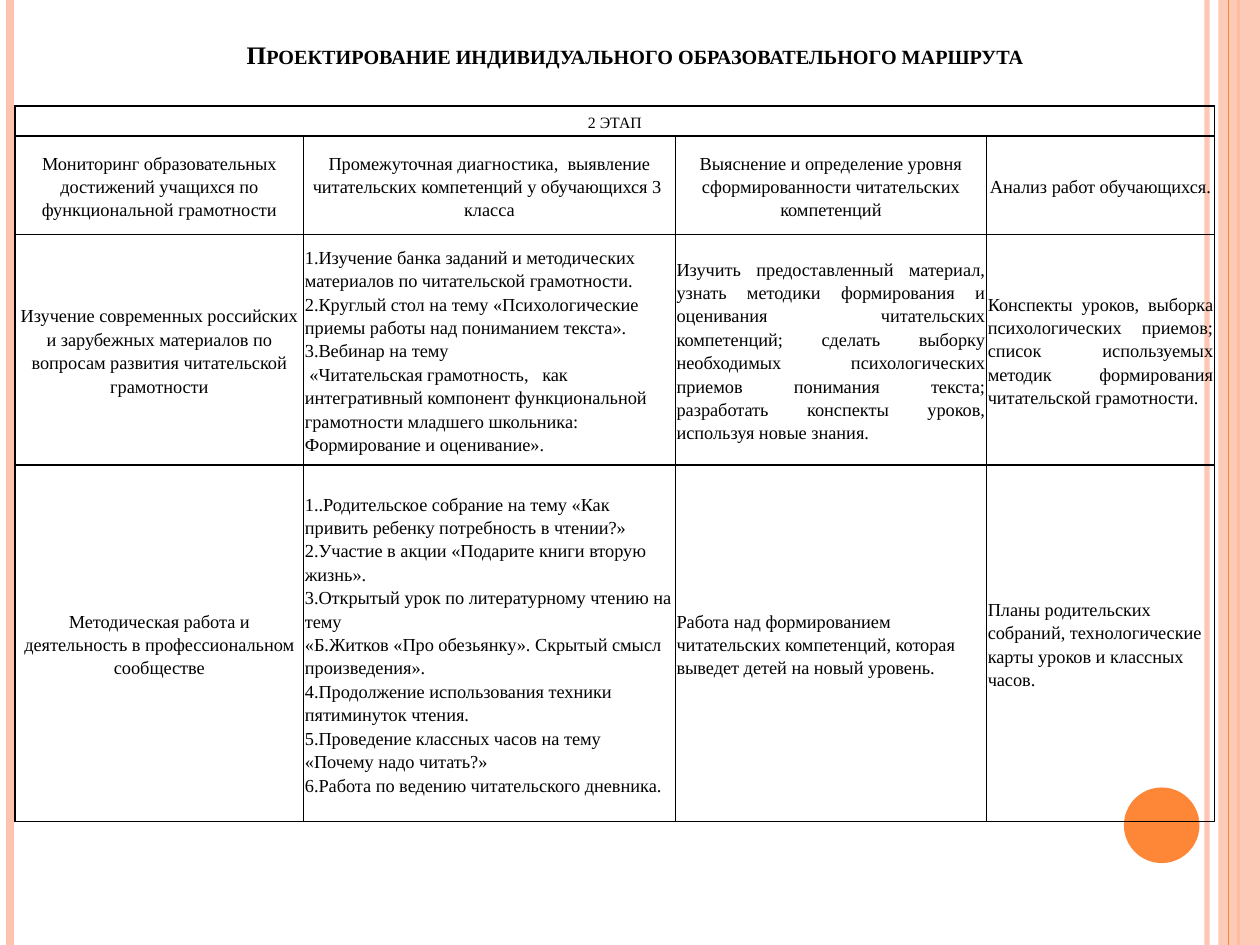
from lxml import etree
from pptx import Presentation
from pptx.dml.color import RGBColor
from pptx.enum.shapes import MSO_CONNECTOR, MSO_SHAPE
from pptx.enum.text import MSO_ANCHOR, PP_ALIGN
from pptx.oxml.ns import qn
from pptx.util import Inches, Pt

LEFT, CENTER, JUSTIFY = PP_ALIGN.LEFT, PP_ALIGN.CENTER, PP_ALIGN.JUSTIFY
MIDDLE, BOTTOM = MSO_ANCHOR.MIDDLE, MSO_ANCHOR.BOTTOM
RECTANGLE, OVAL = MSO_SHAPE.RECTANGLE, MSO_SHAPE.OVAL
STRAIGHT = MSO_CONNECTOR.STRAIGHT

FONT = "Times New Roman"
BLACK, PEACH, ORANGE = "000000", "FEC3AE", "FE8637"
CELL_FORMAT = {
    "margin_left": Inches(0.01),
    "margin_right": Inches(0.01),
    "margin_top": Inches(0.01),
    "margin_bottom": 0,
    "vertical_anchor": MIDDLE,
}
TITLE_FORMAT = {
    "margin_left": Inches(0.1),
    "margin_right": Inches(0.1),
    "margin_top": Inches(0.05),
    "margin_bottom": Inches(0.05),
    "vertical_anchor": BOTTOM,
    "word_wrap": True,
}
COLUMN_WIDTHS = [2.29, 2.95, 2.47, 1.81]
ROW_HEIGHTS = [0.24, 0.78, 1.83, 2.83]
ROWS = [
    [(CENTER, ["2 ЭТАП"])],
    [
        (CENTER, ["Мониторинг образовательных достижений учащихся по функциональной грамотности"]),
        (CENTER, ["Промежуточная диагностика,  выявление читательских компетенций у обучающихся 3  класса"]),
        (CENTER, ["Выяснение и определение уровня сформированности читательских компетенций"]),
        (CENTER, ["Анализ работ обучающихся."]),
    ],
    [
        (CENTER, ["Изучение современных российских и зарубежных материалов по вопросам развития читательской грамотности"]),
        (LEFT, [
            "1.Изучение банка заданий и методических материалов по читательской грамотности.",
            "2.Круглый стол на тему «Психологические приемы работы над пониманием текста».",
            "3.Вебинар на тему",
            " «Читательская грамотность,   как интегративный компонент функциональной грамотности "
            "младшего школьника: Формирование и оценивание».",
        ]),
        (JUSTIFY, [
            "Изучить предоставленный материал, узнать методики формирования и оценивания "
            "читательских компетенций; сделать выборку необходимых психологических приемов "
            "понимания текста; разработать конспекты уроков, используя новые знания.",
        ]),
        (JUSTIFY, [
            "Конспекты уроков, выборка психологических приемов; список используемых методик "
            "формирования читательской грамотности.",
        ]),
    ],
    [
        (CENTER, ["Методическая работа и деятельность в профессиональном сообществе"]),
        (LEFT, [
            "1..Родительское собрание на тему «Как привить ребенку потребность в чтении?»",
            "2.Участие в акции «Подарите книги вторую жизнь».",
            "3.Открытый урок по литературному чтению на тему",
            "«Б.Житков «Про обезьянку». Скрытый смысл произведения».",
            "4.Продолжение использования техники пятиминуток чтения.",
            "5.Проведение классных часов на тему «Почему надо читать?»",
            "6.Работа по ведению читательского дневника.",
        ]),
        (LEFT, ["Работа над формированием читательских компетенций, которая выведет детей на новый уровень."]),
        (LEFT, ["Планы родительских собраний, технологические карты уроков и классных часов."]),
    ],
]


def set_format(target, values):
    for name, value in values.items():
        setattr(target, name, value)


def set_color(color_format, color, opacity=100):
    color_format.rgb = RGBColor.from_string(color)
    if opacity < 100:
        for element in color_format._xFill.iter(qn("a:srgbClr")):
            etree.SubElement(element, qn("a:alpha"), val=str(opacity * 1000))


def add_stripe(slide, x, top, height, color, width, opacity=100):
    stripe = slide.shapes.add_connector(
        STRAIGHT, Inches(x), Inches(top), Inches(x), Inches(top + height))
    stripe.line.width = Pt(width)
    stripe.line.fill.solid()
    set_color(stripe.line.fill.fore_color, color)
    if opacity < 100:
        for element in stripe.line._ln.iter(qn("a:srgbClr")):
            etree.SubElement(element, qn("a:alpha"), val=str(opacity * 1000))
    etree.SubElement(stripe._element.spPr, qn("a:effectLst"))


def add_plain_shape(slide, kind, left, top, width, height, color, opacity=100):
    shape = slide.shapes.add_shape(
        kind, Inches(left), Inches(top), Inches(width), Inches(height))
    shape.shadow.inherit = False
    shape.fill.solid()
    set_color(shape.fill.fore_color, color)
    if opacity < 100:
        for element in shape._element.spPr.iter(qn("a:srgbClr")):
            etree.SubElement(element, qn("a:alpha"), val=str(opacity * 1000))
    shape.line.fill.background()


def add_decoration(slide, left, top, width, height):
    right = left + width
    add_stripe(slide, right - 0.42, top, height, PEACH, 3, 93)
    add_stripe(slide, left + 0.08, top, height, PEACH, 4.5)
    add_stripe(slide, right - 0.17, top, height, ORANGE, 1.5)
    add_plain_shape(slide, RECTANGLE, right - 0.33, top, 0.33, height, PEACH, 87)
    add_stripe(slide, right - 0.25, top, height, ORANGE, 0.75)
    add_plain_shape(slide, OVAL, right - 1.08, top + 6.25, 0.6, 0.6, ORANGE)


def write_run(paragraph, text, size, bold=False):
    run = paragraph.add_run()
    run.text = text
    set_format(run.font, {"name": FONT, "size": Pt(size), "bold": bold})
    set_color(run.font.color, BLACK)
    return run


def add_title(slide, left, top, width, height):
    box = slide.shapes.add_textbox(Inches(left), Inches(top), Inches(width), Inches(height))
    set_format(box.text_frame, TITLE_FORMAT)
    paragraph = box.text_frame.paragraphs[0]
    paragraph.alignment = CENTER
    run = write_run(paragraph, "Проектирование индивидуального образовательного маршрута", 14.4, True)
    run.font._element.set("cap", "small")


def add_borders(cell):
    properties = cell._tc.get_or_add_tcPr()
    for index, side in enumerate(("lnL", "lnR", "lnT", "lnB")):
        border = etree.Element(qn(f"a:{side}"), w=str(Pt(1)))
        fill = etree.SubElement(border, qn("a:solidFill"))
        etree.SubElement(fill, qn("a:srgbClr"), val=BLACK)
        properties.insert(index, border)


def fill_cell(cell, alignment, texts, size):
    set_format(cell, CELL_FORMAT)
    for index, text in enumerate(texts):
        frame = cell.text_frame
        paragraph = frame.add_paragraph() if index else frame.paragraphs[0]
        set_format(paragraph, {"alignment": alignment, "line_spacing": 1.15})
        write_run(paragraph, text, size)


def add_stage_table(slide, left, top, width, height):
    table = slide.shapes.add_table(
        len(ROW_HEIGHTS), len(COLUMN_WIDTHS),
        Inches(left), Inches(top), Inches(width), Inches(height)).table
    set_format(table, {"first_row": False, "horz_banding": False})
    for column, column_width in zip(table.columns, COLUMN_WIDTHS):
        column.width = Inches(column_width)
    for row, row_height in zip(table.rows, ROW_HEIGHTS):
        row.height = Inches(row_height)
    for cell in table.iter_cells():
        cell.fill.background()
        add_borders(cell)
    table.cell(0, 0).merge(table.cell(0, len(COLUMN_WIDTHS) - 1))
    for row_index, contents in enumerate(ROWS):
        for column_index, (alignment, texts) in enumerate(contents):
            size = 10.5 if row_index else 9
            fill_cell(table.cell(row_index, column_index), alignment, texts, size)


def main():
    presentation = Presentation()
    set_format(presentation, {"slide_width": Inches(10), "slide_height": Inches(7.5)})
    slide = presentation.slides.add_slide(presentation.slide_layouts[6])
    add_decoration(slide, 0, 0, 10, 7.5)
    add_title(slide, 0.59, 0.29, 8.9, 0.31)
    add_stage_table(slide, 0.12, 0.84, sum(COLUMN_WIDTHS), sum(ROW_HEIGHTS))
    presentation.save("out.pptx")


if __name__ == "__main__":
    main()
